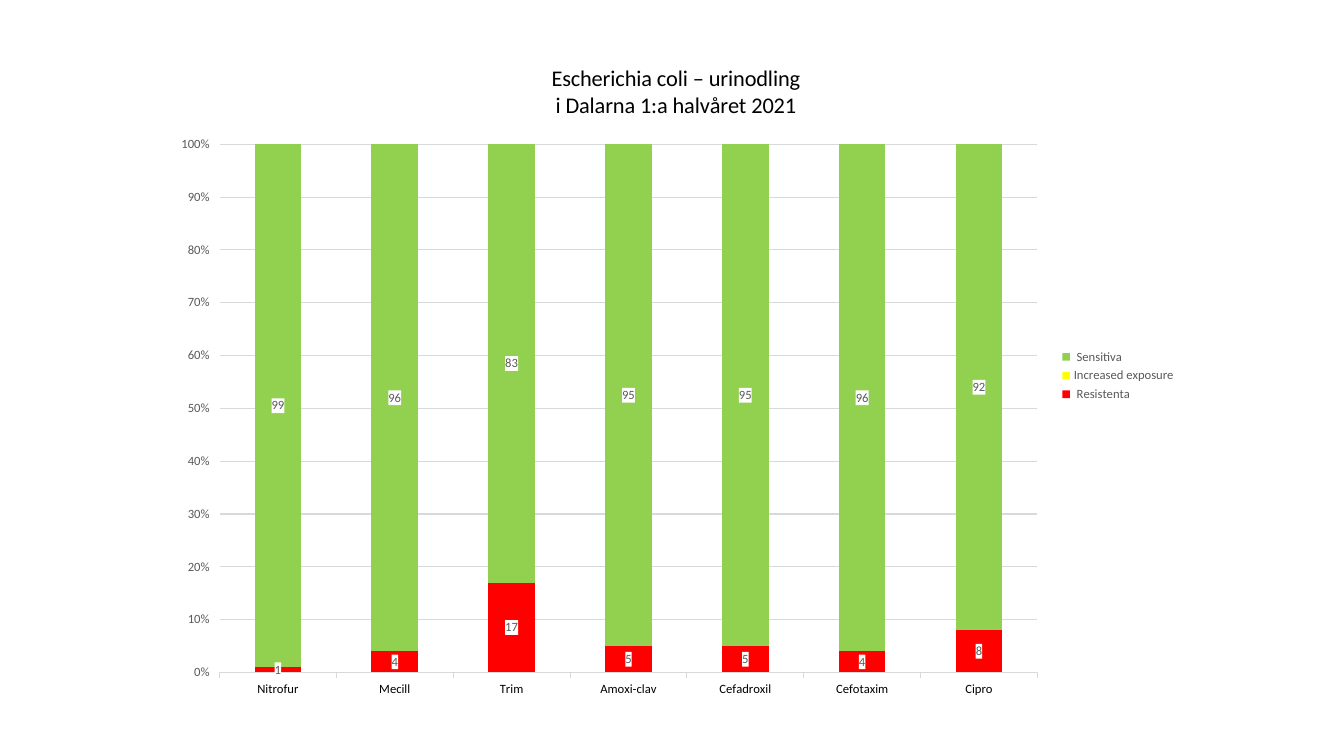
from dataclasses import dataclass

from lxml.etree import SubElement
from pptx import Presentation
from pptx.chart.data import CategoryChartData
from pptx.dml.color import RGBColor
from pptx.enum.chart import XL_CHART_TYPE, XL_LEGEND_POSITION, XL_TICK_MARK
from pptx.oxml import parse_xml
from pptx.oxml.ns import nsdecls, qn
from pptx.util import Cm, Pt


@dataclass(frozen=True)
class Theme:
    font: str = "Calibri"
    black: str = "000000"
    grey: str = "595959"
    rule: str = "D9D9D9"
    label_box: str = "FFFFFF"
    resistant: str = "FF0000"
    exposure: str = "FFFF00"
    sensitive: str = "92D050"
    title_size: float = 16
    base_size: float = 10
    small_size: float = 9
    rule_width: float = 0.75


THEME = Theme()

ANTIBIOTICS = ["Nitrofur", "Mecill", "Trim", "Amoxi-clav", "Cefadroxil", "Cefotaxim", "Cipro"]
# Name, share per antibiotic, colour, labelled
RESULTS = [
    (" Resistenta", [1, 4, 17, 5, 5, 4, 8], THEME.resistant, True),
    ("Increased exposure", [0] * len(ANTIBIOTICS), THEME.exposure, False),
    (" Sensitiva", [99, 96, 83, 95, 95, 96, 92], THEME.sensitive, True),
]
TITLE = "Escherichia coli – urinodling\ni Dalarna 1:a halvåret 2021"


def apply_format(target, values):
    for attribute, value in values.items():
        setattr(target, attribute, value)


def format_font(font, size, colour):
    apply_format(font, {"name": THEME.font, "size": Pt(size), "bold": False})
    font.color.rgb = RGBColor.from_string(colour)


def format_rule(line):
    line.width = Pt(THEME.rule_width)
    line.color.rgb = RGBColor.from_string(THEME.rule)


def place(layout, **fractions):
    """Fix a chart part at fractions of the chart's width and height."""
    for child in list(layout):
        layout.remove(child)
    manual = SubElement(layout, qn("c:manualLayout"))
    if "w" in fractions:
        SubElement(manual, qn("c:layoutTarget")).set("val", "inner")
    for mode in ("xMode", "yMode"):
        SubElement(manual, qn(f"c:{mode}")).set("val", "edge")
    for key, value in fractions.items():
        SubElement(manual, qn(f"c:{key}")).set("val", str(value))


def get_layout(parent, index):
    layout = parent.find(qn("c:layout"))
    if layout is None:
        layout = parse_xml(f"<c:layout {nsdecls('c')}/>")
        parent.insert(index, layout)
    return layout


def add_resistance_chart(slide):
    data = CategoryChartData(number_format="General")
    data.categories = ANTIBIOTICS
    for name, shares, _, _ in RESULTS:
        data.add_series(name, shares)
    frame = slide.shapes.add_chart(
        XL_CHART_TYPE.COLUMN_STACKED_100, Cm(4.06), Cm(1.02), Cm(25.83), Cm(16.89), data)
    chart = frame.chart
    format_font(chart.font, THEME.base_size, THEME.black)
    apply_format(chart.plots[0], {"gap_width": 150, "overlap": 100, "vary_by_categories": False})
    plot_area = chart._chartSpace.chart.plotArea
    place(get_layout(plot_area, 0), x=0.057, y=0.155, w=0.798, h=0.788)
    return chart


def format_title(chart):
    title = chart.chart_title
    title.text_frame.text = TITLE
    for paragraph in title.text_frame.paragraphs:
        for run in paragraph.runs:
            format_font(run.font, THEME.title_size, THEME.black)
    place(get_layout(title._element, 1), x=0.378, y=0.03)


def format_series(series, colour, labelled):
    series.format.fill.solid()
    series.format.fill.fore_color.rgb = RGBColor.from_string(colour)
    if not labelled:
        return
    labels = series.data_labels
    labels.show_value = True
    format_font(labels.font, THEME.small_size, THEME.grey)
    # White box behind each value
    box = parse_xml(
        f"<c:spPr {nsdecls('c', 'a')}><a:solidFill>"
        f'<a:srgbClr val="{THEME.label_box}"/></a:solidFill></c:spPr>')
    labels._element.find(qn("c:txPr")).addprevious(box)


def format_axes(chart):
    antibiotics, share = chart.category_axis, chart.value_axis
    for axis, colour in ((antibiotics, THEME.black), (share, THEME.grey)):
        axis.major_tick_mark = XL_TICK_MARK.OUTSIDE
        format_font(axis.tick_labels.font, THEME.small_size, colour)
    format_rule(antibiotics.format.line)
    apply_format(share, {"minimum_scale": 0, "maximum_scale": 1, "major_unit": 0.1,
                         "has_major_gridlines": True})
    apply_format(share.tick_labels, {"number_format": "0%", "number_format_is_linked": False})
    share.format.line.fill.background()
    format_rule(share.major_gridlines.format.line)


def format_legend(chart):
    chart.has_legend = True
    apply_format(chart.legend, {"position": XL_LEGEND_POSITION.RIGHT, "include_in_layout": False})
    format_font(chart.legend.font, THEME.small_size, THEME.grey)


def main():
    presentation = Presentation()
    apply_format(presentation, {"slide_width": Cm(33.87), "slide_height": Cm(19.05)})
    slide = presentation.slides.add_slide(presentation.slide_layouts[6])

    # Stacked chart with its title, axes and legend
    chart = add_resistance_chart(slide)
    format_title(chart)
    for series, (_, _, colour, labelled) in zip(chart.plots[0].series, RESULTS):
        format_series(series, colour, labelled)
    format_axes(chart)
    format_legend(chart)

    presentation.save("out.pptx")


if __name__ == "__main__":
    main()
